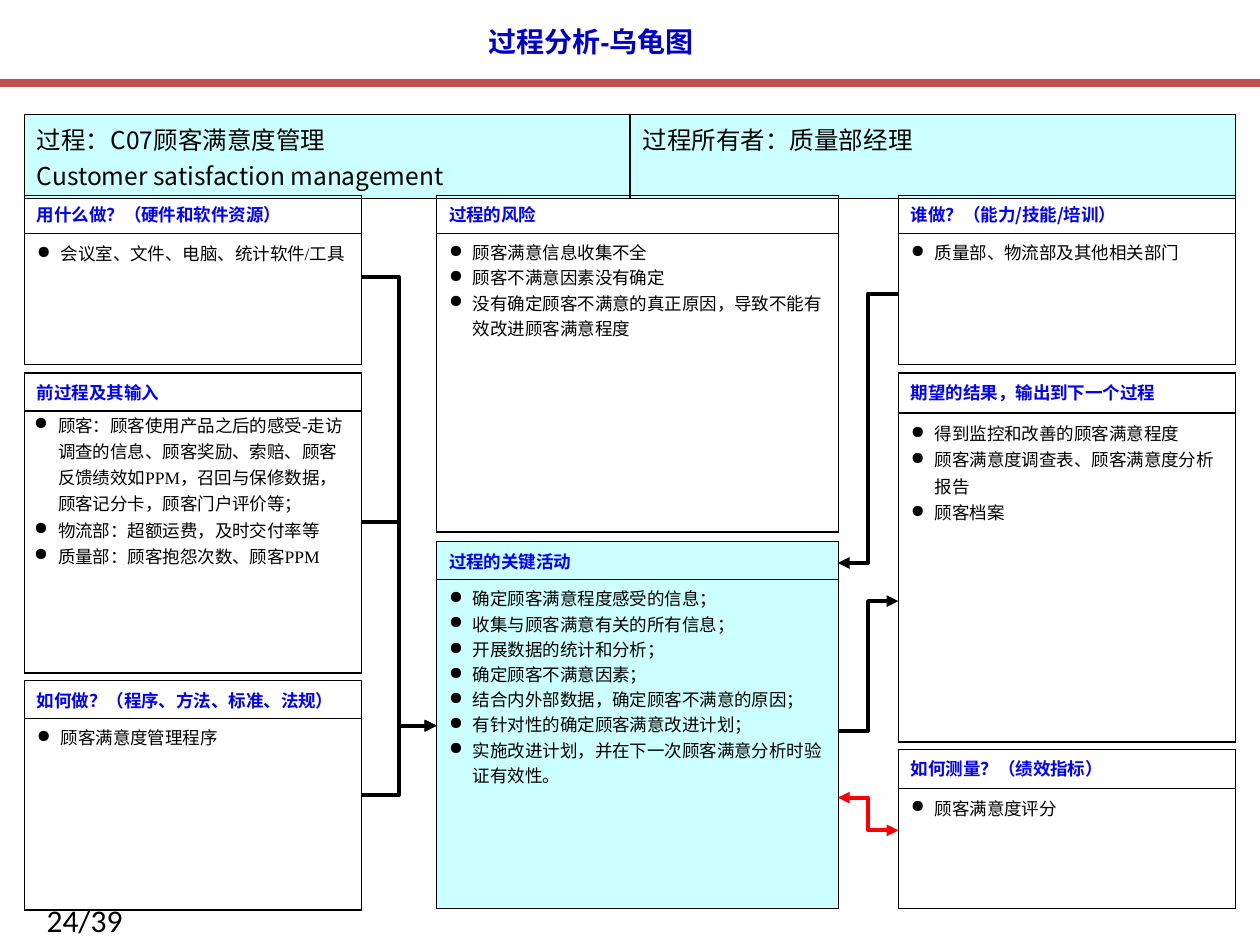
import pptx
import pptx.dml.color
import pptx.enum.shapes
import pptx.enum.text
import pptx.oxml.ns
import pptx.util
from lxml import etree

Cm = pptx.util.Cm
Pt = pptx.util.Pt
RGBColor = pptx.dml.color.RGBColor
qn = pptx.oxml.ns.qn

BLACK = RGBColor(0x00, 0x00, 0x00)
RED = RGBColor(0xFF, 0x00, 0x00)
BRICK = RGBColor(0xC0, 0x50, 0x4D)
TITLE_BLUE = RGBColor(0x00, 0x00, 0xCC)
HEADING_BLUE = RGBColor(0x00, 0x00, 0xFF)
PALE_CYAN = RGBColor(0xCC, 0xFF, 0xFF)

SANS = "Noto Sans CJK SC"
SERIF = "Times New Roman"
STRAIGHT = pptx.enum.shapes.MSO_CONNECTOR.STRAIGHT
ELBOW = pptx.enum.shapes.MSO_CONNECTOR.ELBOW

# Column edges and widths in centimetres
LEFT, MIDDLE, RIGHT = 0.49, 8.8, 18.11
SIDE_WIDTH, MIDDLE_WIDTH = 6.8, 8.1
LEFT_EDGE, MIDDLE_EDGE = 7.29, 16.89


class TurtlePage:
    """Holds the current slide and the style of its elements."""

    def __init__(self, deck):
        self.page = deck.slides.add_slide(deck.slide_layouts[5])
        self.shapes = self.page.shapes

    def style(self, para, size, name, color=BLACK, bold=False):
        font = para.font
        font.size, font.name, font.bold = Pt(size), name, bold
        font.color.rgb = color
        latin = font._element.find(qn("a:latin"))
        east_asian = etree.Element(qn("a:ea"), typeface=SANS)
        latin.addnext(east_asian)

    def title(self, text):
        box = self.shapes.title
        box.left, box.top, box.width, box.height = Cm(5.31), Cm(0.33), Cm(13.21), Cm(0.99)
        frame = box.text_frame
        frame.text = text
        frame.word_wrap = False
        frame.auto_size = pptx.enum.text.MSO_AUTO_SIZE.NONE
        frame.vertical_anchor = pptx.enum.text.MSO_ANCHOR.MIDDLE
        para = frame.paragraphs[0]
        para.alignment = pptx.enum.text.PP_ALIGN.CENTER
        self.style(para, 16, "Arial", TITLE_BLUE, True)

    def line(self, kind, start, end, color=BLACK, width=2.25, head=False, tail=False):
        connector = self.shapes.add_connector(
            kind, *(Cm(value) for value in (*start, *end)))
        connector.line.color.rgb = color
        connector.line.width = Pt(width)
        outline = connector.line._get_or_add_ln()
        for tag, wanted in (("a:headEnd", head), ("a:tailEnd", tail)):
            if wanted:
                etree.SubElement(outline, qn(tag), type="triangle")
        etree.SubElement(connector._element.spPr, qn("a:effectLst"))

    def cell(self, cell, lines, fill=None):
        """Frames and fills a cell, writes its lines, returns the paragraphs."""
        properties = cell._tc.get_or_add_tcPr()
        for side in ("a:lnL", "a:lnR", "a:lnT", "a:lnB"):
            border = etree.SubElement(properties, qn(side), w=str(Pt(1)))
            solid = etree.SubElement(border, qn("a:solidFill"))
            etree.SubElement(solid, qn("a:srgbClr"), val=str(BLACK))
        if fill is None:
            cell.fill.background()
        else:
            cell.fill.solid()
            cell.fill.fore_color.rgb = fill
        cell.text_frame.text = "\n".join(lines)
        return cell.text_frame.paragraphs

    def table(self, left, top, widths, heights):
        table = self.shapes.add_table(
            len(heights), len(widths), Cm(left), Cm(top),
            Cm(sum(widths)), Cm(sum(heights))).table
        table.first_row = table.horz_banding = False
        for column, width in zip(table.columns, widths):
            column.width = Cm(width)
        for row, height in zip(table.rows, heights):
            row.height = Cm(height)
        return table

    def banner(self, left, top, widths, height, texts):
        table = self.table(left, top, widths, [height])
        for index, lines in enumerate(texts):
            for para in self.cell(table.cell(0, index), lines, PALE_CYAN):
                self.style(para, 14, SANS)

    def panel(self, left, top, width, heights, heading, items,
              font=SERIF, fill=None, spacing=None, margins=None):
        table = self.table(left, top, [width], heights)
        for para in self.cell(table.cell(0, 0), [heading], fill):
            self.style(para, 10, SANS, HEADING_BLUE, True)
        body = table.cell(1, 0)
        if margins:
            body.margin_left = body.margin_right = Cm(margins[0])
            body.margin_top = body.margin_bottom = Cm(margins[1])
        for para in self.cell(body, items, fill):
            properties = para._p.get_or_add_pPr()
            properties.set("marL", str(Cm(0.48)))
            properties.set("indent", str(-Cm(0.48)))
            etree.SubElement(properties, qn("a:buChar"), char="●")
            if spacing:
                para.line_spacing = Pt(spacing)
            self.style(para, 10, font)

    def page_number(self, text):
        box = self.shapes.add_textbox(Cm(0.69), Cm(18.03), Cm(2.41), Cm(1.02))
        box.text_frame.word_wrap = True
        box.text_frame.text = text
        self.style(box.text_frame.paragraphs[0], 18, "Calibri")


def main():
    deck = pptx.Presentation()
    deck.slide_width, deck.slide_height = Cm(25.4), Cm(19.05)
    turtle = TurtlePage(deck)

    # Title and rule
    turtle.line(STRAIGHT, (0, 1.68), (25.4, 1.68), BRICK, 4.5)
    turtle.title("过程分析-乌龟图")

    # Inputs that lead into the key activities
    for height in (16.03, 10.52, 5.59):
        turtle.line(ELBOW, (LEFT_EDGE, height), (MIDDLE, 14.63), tail=True)

    # Links between the key activities and the right column
    turtle.line(ELBOW, (MIDDLE_EDGE, 14.73), (RIGHT, 12.12), tail=True)
    turtle.line(ELBOW, (MIDDLE_EDGE, 16.08), (RIGHT, 16.74), RED, head=True, tail=True)
    turtle.line(ELBOW, (MIDDLE_EDGE, 11.35), (RIGHT, 5.92), head=True)

    # Process name and owner
    turtle.banner(LEFT, 2.31, [12.21, 12.21], 1.45, [
        ["过程：C07顾客满意度管理", "Customer satisfaction management"],
        ["过程所有者：质量部经理"]])

    # Left column
    turtle.panel(LEFT, 3.94, SIDE_WIDTH, [0.69, 2.64], "用什么做？（硬件和软件资源）",
                 ["会议室、文件、电脑、统计软件/工具"], spacing=15)
    turtle.panel(LEFT, 7.52, SIDE_WIDTH, [0.71, 5.28], "前过程及其输入", [
        "顾客：顾客使用产品之后的感受-走访调查的信息、顾客奖励、索赔、顾客反馈绩效如PPM，"
        "召回与保修数据，顾客记分卡，顾客门户评价等；",
        "物流部：超额运费，及时交付率等",
        "质量部：顾客抱怨次数、顾客PPM"], spacing=15, margins=(0.2, 0))
    turtle.panel(LEFT, 13.72, SIDE_WIDTH, [0.74, 3.86], "如何做？（程序、方法、标准、法规）",
                 ["顾客满意度管理程序"])

    # Right column
    turtle.panel(RIGHT, 3.94, SIDE_WIDTH, [0.69, 2.64], "谁做？（能力/技能/培训）",
                 ["质量部、物流部及其他相关部门"])
    turtle.panel(RIGHT, 7.52, SIDE_WIDTH, [0.81, 6.63], "期望的结果，输出到下一个过程", [
        "得到监控和改善的顾客满意程度",
        "顾客满意度调查表、顾客满意度分析报告",
        "顾客档案"], font=SANS, spacing=15)
    turtle.panel(RIGHT, 15.11, SIDE_WIDTH, [0.79, 2.41], "如何测量？（绩效指标）",
                 ["顾客满意度评分"])

    # Middle column
    turtle.panel(MIDDLE, 3.94, MIDDLE_WIDTH, [0.69, 6.02], "过程的风险", [
        "顾客满意信息收集不全",
        "顾客不满意因素没有确定",
        "没有确定顾客不满意的真正原因，导致不能有效改进顾客满意程度"], font=SANS)
    turtle.panel(MIDDLE, 10.92, MIDDLE_WIDTH, [0.76, 6.63], "过程的关键活动", [
        "确定顾客满意程度感受的信息；",
        "收集与顾客满意有关的所有信息；",
        "开展数据的统计和分析；",
        "确定顾客不满意因素；",
        "结合内外部数据，确定顾客不满意的原因；",
        "有针对性的确定顾客满意改进计划；",
        "实施改进计划，并在下一次顾客满意分析时验证有效性。"], font=SANS, fill=PALE_CYAN)

    turtle.page_number("24/39")
    deck.save("out.pptx")


if __name__ == "__main__":
    main()
